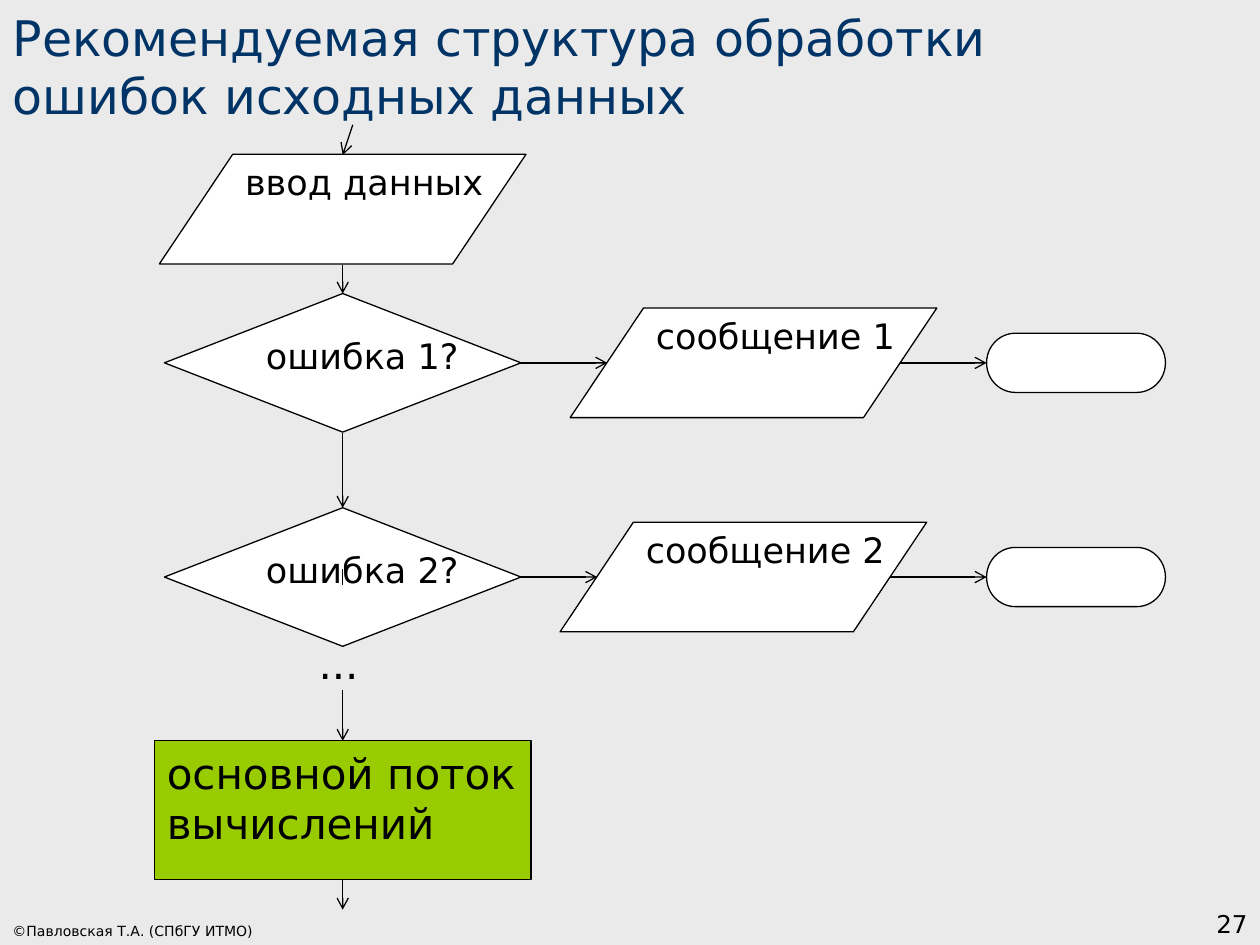
from lxml import etree
from pptx import Presentation
from pptx.dml.color import RGBColor
from pptx.enum.shapes import MSO_CONNECTOR, MSO_SHAPE
from pptx.enum.text import MSO_ANCHOR, MSO_AUTO_SIZE, PP_ALIGN
from pptx.oxml.ns import qn
from pptx.util import Inches, Pt

FONT = "DejaVu Sans"
COLORS = {
    "background": "EAEAEA",
    "title": "003366",
    "ink": "000000",
    "box": "FFFFFF",
    "main": "99CC00",
}
AXIS = 2.72  # centre line of the main flow


def color(name):
    return RGBColor.from_string(COLORS[name])


def set_text(shape, text, size, ink="ink", align=PP_ALIGN.LEFT,
             anchor=MSO_ANCHOR.TOP, wrap=False):
    frame = shape.text_frame
    frame.text = text
    frame.auto_size = MSO_AUTO_SIZE.NONE
    frame.word_wrap = wrap
    frame.vertical_anchor = anchor
    for paragraph in frame.paragraphs:
        paragraph.alignment = align
        paragraph.font.name = FONT
        paragraph.font.size = Pt(size)
        paragraph.font.color.rgb = color(ink)


def add_title(slide, text):
    title = slide.shapes.title
    title.left, title.top = Inches(0), Inches(0)
    title.width, title.height = Inches(9.37), Inches(1.04)
    set_text(title, text, 28, "title", anchor=MSO_ANCHOR.BOTTOM, wrap=True)


def add_label(slide, left, top, width, height, text, size, **options):
    label = slide.shapes.add_textbox(
        Inches(left), Inches(top), Inches(width), Inches(height))
    set_text(label, text, size, **options)


def add_block(slide, kind, center, middle, width, height, text="", size=20, fill="box"):
    """Add a flowchart block centred on the given point."""
    block = slide.shapes.add_shape(
        kind, Inches(center - width / 2), Inches(middle - height / 2),
        Inches(width), Inches(height))
    block.shadow.inherit = False
    block.fill.solid()
    block.fill.fore_color.rgb = color(fill)
    block.line.color.rgb = color("ink")
    block.line.width = Pt(0.75)
    if text:
        set_text(block, text, size)


def add_decision(slide, middle, text):
    add_block(slide, MSO_SHAPE.FLOWCHART_DECISION, AXIS, middle, 2.83, 1.1, text)


def add_data(slide, center, middle, text):
    add_block(slide, MSO_SHAPE.FLOWCHART_DATA, center, middle, 2.91, 0.87, text)


def add_line(slide, start, end, arrow=True):
    line = slide.shapes.add_connector(
        MSO_CONNECTOR.STRAIGHT, *(Inches(value) for value in (*start, *end)))
    line.line.color.rgb = color("ink")
    line.line.width = Pt(0.75)
    if arrow:
        tail = etree.SubElement(line.line._get_or_add_ln(), qn("a:tailEnd"))
        tail.set("type", "arrow")
    etree.SubElement(line._element.spPr, qn("a:effectLst"))


def add_error_branch(slide, number, middle, message_center):
    """Add one check with its message and its end block."""
    add_decision(slide, middle, f"ошибка {number}?")
    add_data(slide, message_center, middle, f"сообщение {number}")
    add_block(slide, MSO_SHAPE.FLOWCHART_TERMINATOR, 8.54, middle, 1.42, 0.47)
    add_line(slide, (4.13, middle), (message_center - 1.16, middle))
    add_line(slide, (message_center + 1.16, middle), (7.83, middle))


def main():
    presentation = Presentation()
    presentation.slide_width, presentation.slide_height = Inches(10), Inches(7.5)
    slide = presentation.slides.add_slide(presentation.slide_layouts[5])
    slide.background.fill.solid()
    slide.background.fill.fore_color.rgb = color("background")

    add_title(slide, "Рекомендуемая структура обработки ошибок исходных данных")
    add_label(slide, 0, 7.22, 3.11, 0.28, "©Павловская Т.А. (СПбГУ ИТМО)", 8,
              anchor=MSO_ANCHOR.BOTTOM, wrap=True)
    add_label(slide, 7.92, 7, 2.08, 0.5, "27", 14, align=PP_ALIGN.RIGHT,
              anchor=MSO_ANCHOR.BOTTOM, wrap=True)

    add_data(slide, AXIS, 1.66, "ввод данных")
    add_error_branch(slide, 1, 2.88, 5.98)
    add_error_branch(slide, 2, 4.58, 5.9)
    add_block(slide, MSO_SHAPE.FLOWCHART_PROCESS, AXIS, 6.43, 2.99, 1.1,
              "основной поток\nвычислений", 24, "main")

    add_line(slide, (2.8, 0.99), (AXIS, 1.23))
    for top, bottom in [(2.1, 2.33), (3.44, 4.03), (5.48, 5.88), (6.98, 7.22)]:
        add_line(slide, (AXIS, top), (AXIS, bottom))
    add_line(slide, (AXIS, 4.52), (AXIS, 4.64), arrow=False)
    add_label(slide, 2.43, 5.01, 0.57, 0.5, "...", 24)

    presentation.save("out.pptx")


if __name__ == "__main__":
    main()
